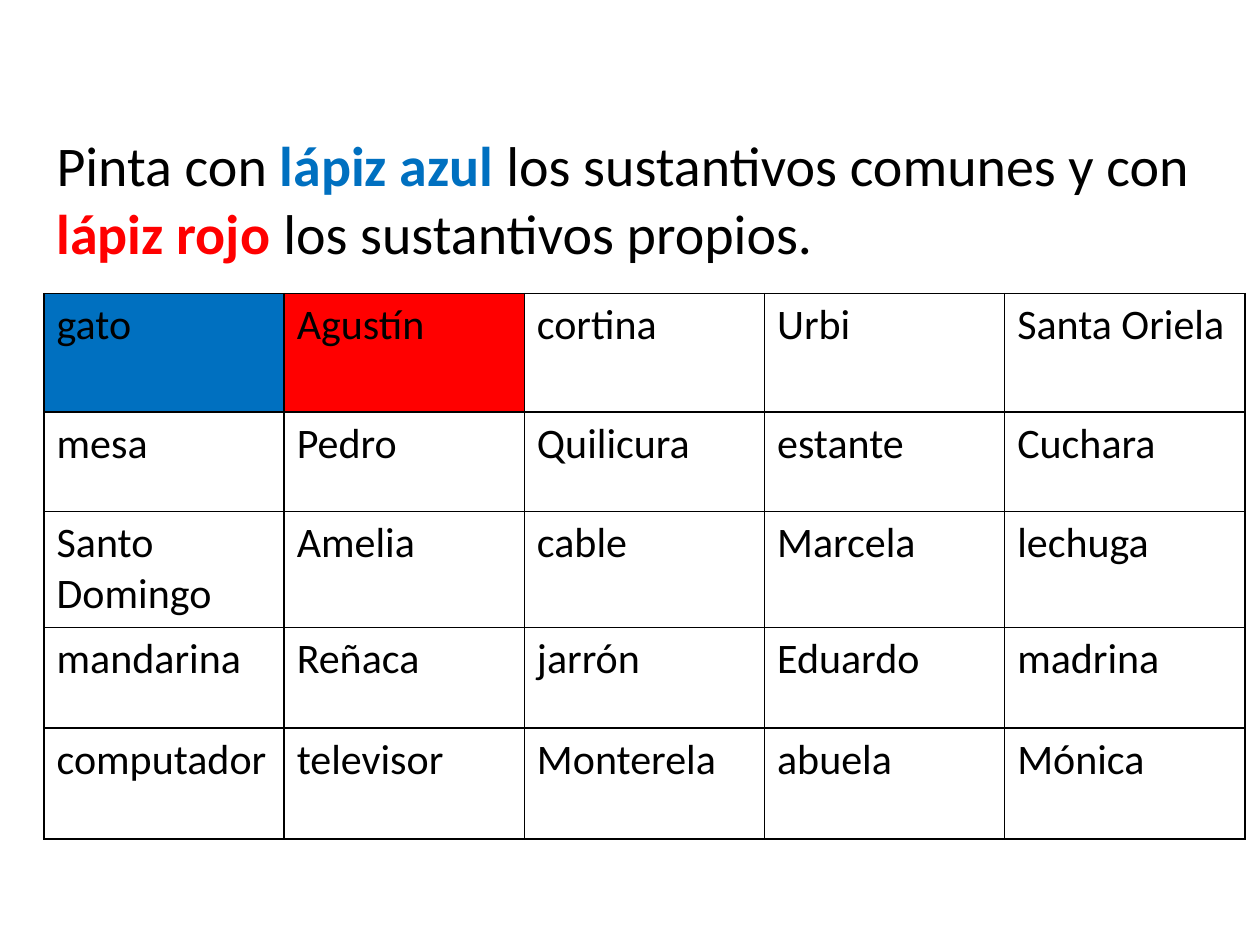
from dataclasses import dataclass

from lxml import etree
from pptx import Presentation
from pptx.dml.color import RGBColor
from pptx.enum.text import MSO_ANCHOR, PP_ALIGN
from pptx.oxml.ns import qn
from pptx.util import Inches, Pt

LEFT = PP_ALIGN.LEFT
TOP = MSO_ANCHOR.TOP


@dataclass(frozen=True)
class Theme:
    font: str = "Calibri"
    ink: str = "000000"
    blue: str = "0070C0"
    red: str = "FF0000"
    instruction_size: int = 32
    word_size: int = 24
    border_width: int = 1


THEME = Theme()
SLIDE_WIDTH, SLIDE_HEIGHT = 10, 7.5
INSTRUCTION_BOX = (0.35, 0.99, 9.29, 1.26)
WORD_BOX = (0.35, 2.33, 9.53, 4.32)

WORDS = [
    ["gato", "Agustín", "cortina", "Urbi", "Santa Oriela"],
    ["mesa", "Pedro", "Quilicura", "estante", "Cuchara"],
    ["Santo Domingo", "Amelia", "cable", "Marcela", "lechuga"],
    ["mandarina", "Reñaca", "jarrón", "Eduardo", "madrina"],
    ["computador", "televisor", "Monterela", "abuela", "Mónica"],
]
ROW_HEIGHTS = [0.94, 0.79, 0.92, 0.8, 0.88]
PAINTED_WORDS = {"gato": THEME.blue, "Agustín": THEME.red}


def add_text(paragraph, text, *, size, color=THEME.ink, bold=False):
    """Append one formatted run to a paragraph."""
    run = paragraph.add_run()
    run.text = text
    run.font.name = THEME.font
    run.font.size = Pt(size)
    run.font.bold = bold
    run.font.color.rgb = RGBColor.from_string(color)


def add_borders(cell):
    """Draw a thin line on every side; borders come before the cell fill."""
    properties = cell._tc.get_or_add_tcPr()
    for position, side in enumerate(("lnL", "lnR", "lnT", "lnB")):
        line = etree.Element(qn(f"a:{side}"), w=str(Pt(THEME.border_width)))
        fill = etree.SubElement(line, qn("a:solidFill"))
        etree.SubElement(fill, qn("a:srgbClr"), val=THEME.ink)
        properties.insert(position, line)


def add_instruction(slide, box):
    """Place the instruction with its two coloured phrases."""
    shape = slide.shapes.add_textbox(*map(Inches, box))
    frame = shape.text_frame
    frame.word_wrap = True
    frame.vertical_anchor = TOP
    paragraph = frame.paragraphs[0]
    paragraph.alignment = LEFT
    phrases = [
        ("Pinta con ", {}),
        ("lápiz azul ", {"color": THEME.blue, "bold": True}),
        ("los sustantivos comunes y con ", {}),
        ("lápiz rojo ", {"color": THEME.red, "bold": True}),
        ("los sustantivos propios.", {}),
    ]
    for text, style in phrases:
        add_text(paragraph, text, size=THEME.instruction_size, **style)


def add_word_table(slide, box):
    """Place the words in equal columns, with the two examples painted."""
    column_count = len(WORDS[0])
    table = slide.shapes.add_table(
        len(WORDS), column_count, *map(Inches, box)
    ).table
    table.first_row = False
    table.horz_banding = False
    for column in table.columns:
        column.width = Inches(box[2] / column_count)
    for row, height, words in zip(table.rows, ROW_HEIGHTS, WORDS):
        row.height = Inches(height)
        for cell, word in zip(row.cells, words):
            add_text(cell.text_frame.paragraphs[0], word, size=THEME.word_size)
            if word in PAINTED_WORDS:
                cell.fill.solid()
                cell.fill.fore_color.rgb = RGBColor.from_string(PAINTED_WORDS[word])
            else:
                cell.fill.background()
            add_borders(cell)


def main():
    presentation = Presentation()
    presentation.slide_width = Inches(SLIDE_WIDTH)
    presentation.slide_height = Inches(SLIDE_HEIGHT)
    slide = presentation.slides.add_slide(presentation.slide_layouts[6])

    # Instruction above the word grid
    add_instruction(slide, INSTRUCTION_BOX)
    add_word_table(slide, WORD_BOX)

    presentation.save("out.pptx")


if __name__ == "__main__":
    main()
